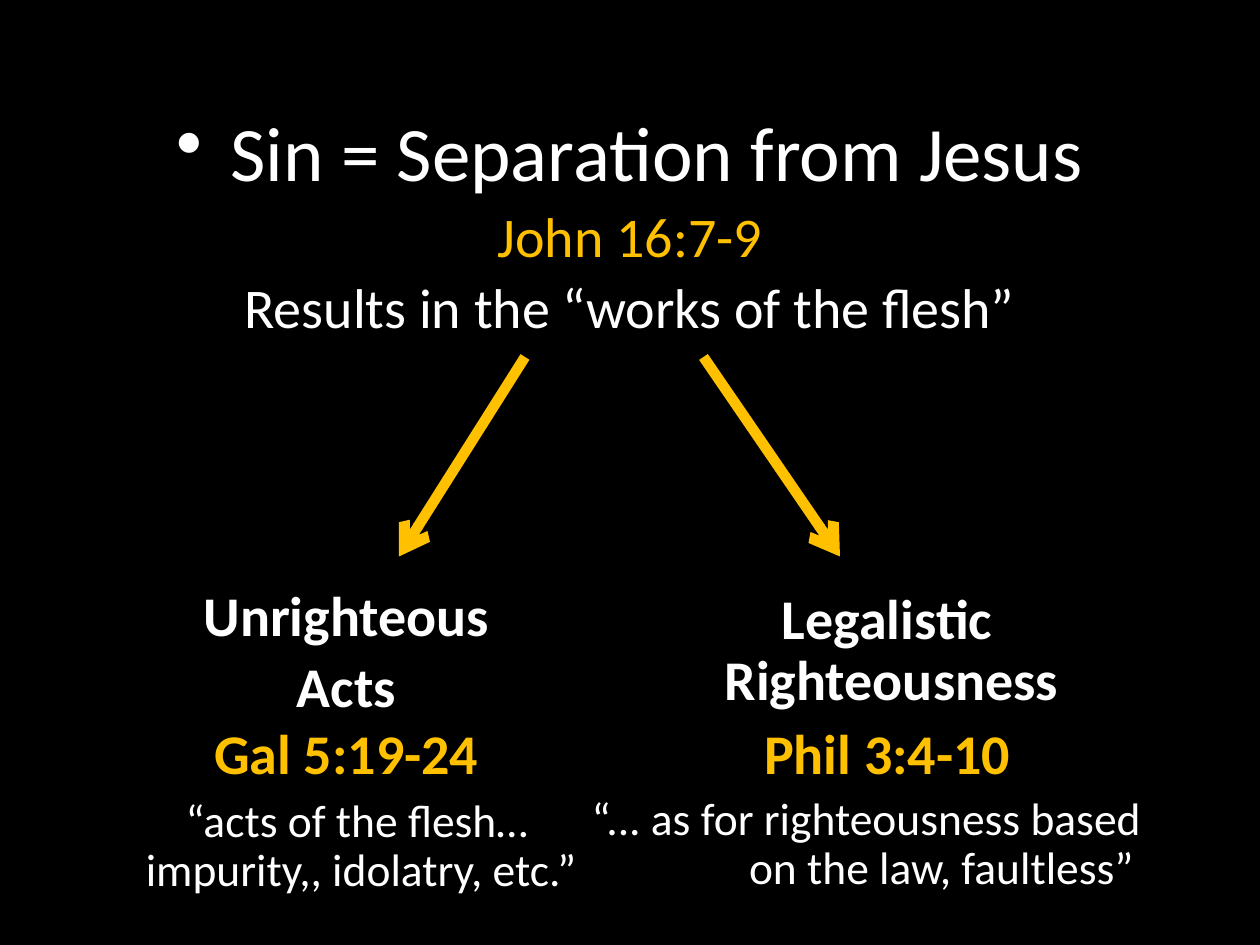
import pptx
import pptx.dml.color
import pptx.enum.shapes
import pptx.enum.text
import pptx.oxml.ns
import pptx.util
from lxml import etree

Pt = pptx.util.Pt
qn = pptx.oxml.ns.qn
CENTER = pptx.enum.text.PP_ALIGN.CENTER
LEFT = pptx.enum.text.PP_ALIGN.LEFT
COLORS = {"background": "000000", "text": "FFFFFF", "accent": "FFC000"}


def rgb(name):
    return pptx.dml.color.RGBColor.from_string(COLORS[name])


def add_text(box, lines, size, color="text", bold=False, align=CENTER):
    """Each line is (text, left indent, first-line indent, overrides)."""
    frame = slide.shapes.add_textbox(*map(Pt, box)).text_frame
    frame.word_wrap = True
    frame.margin_left = frame.margin_right = 0
    frame.margin_top = frame.margin_bottom = 0
    for index, (text, left, first, changes) in enumerate(lines):
        paragraph = frame.paragraphs[0] if index == 0 else frame.add_paragraph()
        paragraph.alignment = align
        paragraph.line_spacing = 0.9
        paragraph.space_before = Pt(changes.get("before", 6) if index else 0)
        properties = paragraph._p.get_or_add_pPr()
        properties.set("marL", str(Pt(left)))
        properties.set("indent", str(Pt(first)))
        if "bullet" in changes:
            etree.SubElement(properties, qn("a:buChar")).set("char", changes["bullet"])
        run = paragraph.add_run()
        run.text = text
        run.font.name = "Calibri"
        run.font.size = Pt(changes.get("size", size))
        run.font.bold = bold
        run.font.color.rgb = rgb(changes.get("color", color))


presentation = pptx.Presentation()
presentation.slide_width = Pt(720)
presentation.slide_height = Pt(540)
slide = presentation.slides.add_slide(presentation.slide_layouts[6])
slide.background.fill.solid()
slide.background.fill.fore_color.rgb = rgb("background")

# Main statement
add_text((30, 66, 660, 133), [
    ("Sin = Separation from Jesus", 31, -31, {"size": 44, "bullet": "•"}),
    ("John 16:7-9", 0, 0, {"color": "accent"}),
    ("Results in the “works of the flesh”", 0, 0, {}),
], 32)

# Branch headings
add_text((96, 336, 204, 78), [("Unrighteous", 0, 0, {}), ("Acts", 0, 0, {})], 32, bold=True)
add_text((372, 338, 270, 70), [("Legalistic Righteousness", 5, -5, {})], 32, bold=True)

# Arrows to the branches
for start_x, end_x in ((402, 480), (300, 228)):
    arrow = slide.shapes.add_connector(
        pptx.enum.shapes.MSO_CONNECTOR.STRAIGHT, Pt(start_x), Pt(204), Pt(end_x), Pt(318))
    arrow.line.color.rgb = rgb("accent")
    arrow.line.width = Pt(6)
    etree.SubElement(arrow.line._get_or_add_ln(), qn("a:tailEnd")).set("type", "arrow")
    etree.SubElement(arrow._element.spPr, qn("a:effectLst"))

# Scripture references
for left, width, reference in ((96, 204, "Gal 5:19-24"), (372, 270, "Phil 3:4-10")):
    add_text((left, 415, width, 35), [(reference, 0, 0, {})], 32, "accent", bold=True)

# Quotations
add_text((336, 455, 348, 57), [
    ("“... as for righteousness based", 2, 0, {}),
    ("on the law, faultless”", 92, 0, {"before": 0}),
], 26, align=LEFT)
add_text((66, 456, 276, 57), [("“acts of the flesh… impurity,, idolatry, etc.”", 5, -5, {})], 26)

presentation.save("out.pptx")
